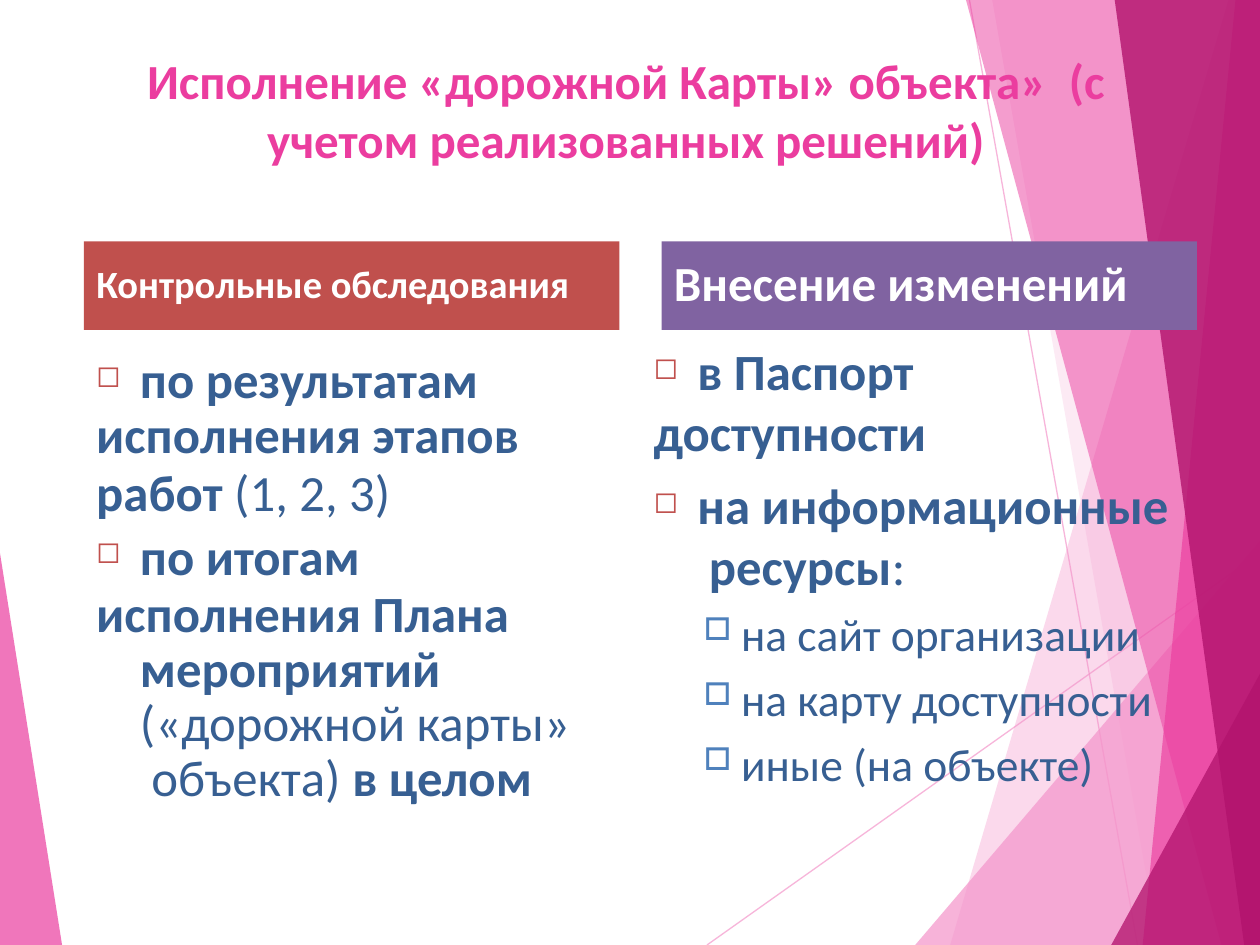
import lxml.etree
import pptx
import pptx.dml.color
import pptx.enum.shapes
import pptx.enum.text
import pptx.oxml.ns
import pptx.util

Pt = pptx.util.Pt
qn = pptx.oxml.ns.qn
PINK, LIGHT, DARK = "EB3D9F", "F496CB", "B2136D"
RED, PURPLE, BLUE, SKY, WHITE = "C0504D", "8063A1", "375F92", "4F81BC", "FFFFFF"
WIDE, HIGH = 720, 540


def paint(color, code, alpha=None):
    """Set a colour; color is a ColorFormat with a solid parent."""
    color.rgb = pptx.dml.color.RGBColor.from_string(code)


def fade(node, alpha):
    for clr in node.iter(qn("a:srgbClr")):
        lxml.etree.SubElement(clr, qn("a:alpha")).set("val", str(alpha * 1000))


def fill(shape, code):
    shape.shadow.inherit = False
    shape.fill.solid()
    paint(shape.fill.fore_color, code)
    shape.line.fill.background()


def facet(slide, points, code, alpha):
    first, *rest = [(Pt(x), Pt(y)) for x, y in points]
    path = slide.shapes.build_freeform(*first)
    path.add_line_segments(rest, close=True)
    shape = path.convert_to_shape()
    fill(shape, code)
    fade(shape.fill._xPr, alpha)


def ray(slide, x1, y1, x2, y2):
    line = slide.shapes.add_connector(
        pptx.enum.shapes.MSO_CONNECTOR.STRAIGHT, Pt(x1), Pt(y1), Pt(x2), Pt(y2))
    line.line.width = Pt(0.75)
    line.line.fill.solid()
    paint(line.line.color, LIGHT)
    props = line._element.spPr
    fade(props, 70)
    lxml.etree.SubElement(props, qn("a:effectLst"))


def decor(slide, wide, high):
    """Crystal-like facets along the slide edges."""
    ray(slide, 404, high, wide, 316)
    ray(slide, 554, 0, 650, high)
    # Bands down to the right edge: top x, bottom x, colour, opacity
    bands = [
        (702, 543, LIGHT, 36), (567, 662, LIGHT, 20), None,
        (552, 698, PINK, 50), (706, 653, PINK, 66), (637, 711, DARK, 80)]
    for band in bands:
        if band is None:
            facet(slide, [(523, high), (wide, 309), (wide, high)], LIGHT, 72)
            continue
        top, low, code, alpha = band
        facet(slide, [(top, 0), (low, high), (wide, high), (wide, 0)], code, alpha)
    # Corner facets
    facet(slide, [(635, high), (wide, 385), (wide, high)], DARK, 76)
    facet(slide, [(0, 316), (35.5, high), (0, high)], PINK, 70)


def setup(frame, top):
    frame.word_wrap = True
    frame.auto_size = pptx.enum.text.MSO_AUTO_SIZE.NONE
    frame.vertical_anchor = pptx.enum.text.MSO_ANCHOR.TOP
    frame.margin_left = frame.margin_right = frame.margin_bottom = 0
    frame.margin_top = Pt(top)


def write(par, text, size, code, bold=True):
    run = par.add_run()
    run.text = text
    run.font.name = "Calibri"
    run.font.size = Pt(size)
    run.font.bold = bold
    paint(run.font.color, code)


def title(slide, left, top, width, height):
    box = slide.shapes.add_textbox(Pt(left), Pt(top), Pt(width), Pt(height))
    setup(box.text_frame, 1)
    par = box.text_frame.paragraphs[0]
    par.alignment = pptx.enum.text.PP_ALIGN.CENTER
    write(par, "Исполнение «дорожной Карты» объекта»  (с учетом реализованных решений)",
          28, PINK)


def head(slide, left, top, width, height, text, size, code, inset):
    box = slide.shapes.add_shape(
        pptx.enum.shapes.MSO_SHAPE.RECTANGLE, Pt(left), Pt(top), Pt(width), Pt(height))
    fill(box, code)
    setup(box.text_frame, inset)
    box.text_frame.margin_left = Pt(7.2)
    par = box.text_frame.paragraphs[0]
    par.alignment = pptx.enum.text.PP_ALIGN.LEFT
    write(par, text, size, WHITE)


def bullet(par, mark, code, scale):
    props = par._p.get_or_add_pPr()
    tint = lxml.etree.SubElement(props, qn("a:buClr"))
    lxml.etree.SubElement(tint, qn("a:srgbClr")).set("val", code)
    lxml.etree.SubElement(props, qn("a:buSzPct")).set("val", str(scale * 1000))
    lxml.etree.SubElement(props, qn("a:buChar")).set("char", mark)


def body(slide, left, top, width, height, items):
    """Items: (kind, line spacing, space before, [(text, bold) or None for a break])."""
    kinds = {
        "main": (29, 26, -25, ("◻", RED, 59)),
        "more": (29, 26, -25, None),
        "sub": (26, 51, -21.5, ("□", SKY, 69))}
    box = slide.shapes.add_textbox(Pt(left), Pt(top), Pt(width), Pt(height))
    frame = box.text_frame
    setup(frame, 1)
    for i, (kind, pitch, before, runs) in enumerate(items):
        size, margin, indent, mark = kinds[kind]
        par = frame.add_paragraph() if i else frame.paragraphs[0]
        par.level = int(kind == "sub")
        if pitch:
            par.line_spacing = pitch
        par.space_before = Pt(before)
        props = par._p.get_or_add_pPr()
        props.set("marL", str(Pt(margin)))
        props.set("indent", str(Pt(indent)))
        if mark:
            bullet(par, *mark)
        for part in runs:
            if part is None:
                par.add_line_break()
            else:
                write(par, part[0], size, BLUE, part[1])


def main():
    deck = pptx.Presentation()
    deck.slide_width, deck.slide_height = Pt(WIDE), Pt(HIGH)
    slide = deck.slides.add_slide(deck.slide_layouts[6])
    decor(slide, WIDE, HIGH)
    title(slide, 67, 28, 581, 69)

    # Left column: checks
    body(slide, 54, 199.5, 273, 263.5, [
        ("main", Pt(33), 0, [("по результатам", True)]),
        ("more", Pt(31.4), 0, [("исполнения этапов", True)]),
        ("more", Pt(33), 0, [("работ ", True), ("(1, 2, 3)", False)]),
        ("main", Pt(33), 3.6, [("по итогам", True)]),
        ("more", 0.9, 1.8, [
            ("исполнения Плана мероприятий ", True), ("(«дорожной карты»", False),
            None, (" объекта) ", False), ("в целом", True)])])

    # Right column: changes
    subs = ["на сайт организации", "на карту доступности", "иные (на объекте)"]
    body(slide, 372.5, 193, 297.5, 260, [
        ("main", None, 0, [("в Паспорт", True)]),
        ("more", None, 0, [("доступности", True)]),
        ("main", None, 7, [
            ("на информационные", True), None, (" ресурсы", True), (":", False)]),
        *[("sub", None, 6, [(text, False)]) for text in subs]])

    # Column headings
    heads = [("Контрольные обследования", 22, RED, 10.8),
             ("Внесение изменений", 28, PURPLE, 6.5)]
    for i, spec in enumerate(heads):
        head(slide, 48 + 330 * i, 138, 306, 50.5, *spec)
    deck.save("out.pptx")


if __name__ == "__main__":
    main()
